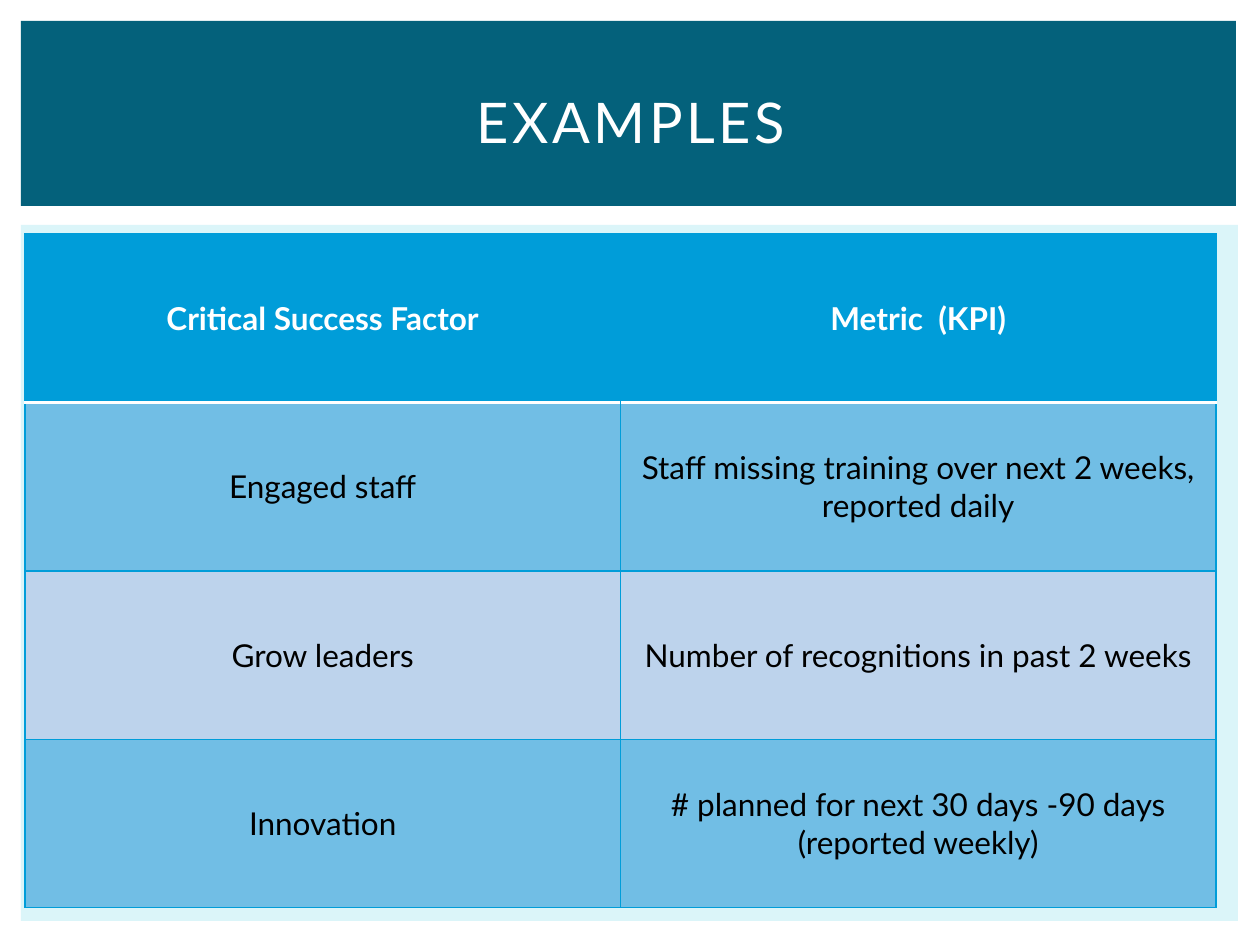
from lxml import etree
from pptx import Presentation
from pptx import util as u
from pptx.dml.color import RGBColor
from pptx.enum import shapes, text
from pptx.oxml.ns import qn

PX = u.Inches(1) / 126
FONT = "Lato"
WHITE = RGBColor(0xFF, 0xFF, 0xFF)
BLACK = RGBColor(0, 0, 0)
TEAL = RGBColor(0x04, 0x61, 0x7B)
PALE = RGBColor(0xDB, 0xF5, 0xF9)
BLUE = RGBColor(0x00, 0x9D, 0xD9)
BAND = RGBColor(0x71, 0xBE, 0xE5)
PLAIN = RGBColor(0xBD, 0xD3, 0xEC)

ROWS = [
    ("Critical Success Factor", "Metric  (KPI)"),
    ("Engaged staff", "Staff missing training over next 2 weeks, reported daily"),
    ("Grow leaders", "Number of recognitions in past 2 weeks"),
    ("Innovation", "# planned for next 30 days -90 days (reported weekly)"),
]


def px(num):
    return u.Emu(round(num * PX))


def panel(slide, box, color):
    rect = slide.shapes.add_shape(shapes.MSO_SHAPE.RECTANGLE, *map(px, box))
    rect.shadow.inherit = False
    rect.fill.solid()
    rect.fill.fore_color.rgb = color
    rect.line.fill.background()


def style(para, size, color, bold=False):
    para.alignment = text.PP_ALIGN.CENTER
    font = para.font
    font.name, font.size, font.bold = FONT, u.Pt(size), bold
    font.color.rgb = color


def title(slide, box, words):
    left, top, width, height = box
    panel(slide, box, TEAL)
    label = slide.shapes.add_textbox(
        px(left + 32), px(top + 28), px(width - 59), px(height - 40))
    frame = label.text_frame
    frame.word_wrap = True
    frame.vertical_anchor = text.MSO_ANCHOR.MIDDLE
    para = frame.paragraphs[0]
    run = para.add_run()
    run.text = words
    style(para, 32, WHITE)
    run.font._element.set("spc", "200")


def edge(cell, side, color, width):
    props = cell._tc.get_or_add_tcPr()
    line = etree.SubElement(props, qn("a:ln" + side), w=str(u.Pt(width)))
    if color is None:
        etree.SubElement(line, qn("a:noFill"))
    else:
        fill = etree.SubElement(line, qn("a:solidFill"))
        etree.SubElement(fill, qn("a:srgbClr"), val=str(color))


def fill_cell(cell, words, row, col):
    head = row == 0
    cell.text = words
    cell.vertical_anchor = text.MSO_ANCHOR.MIDDLE
    style(cell.text_frame.paragraphs[0], 18, WHITE if head else BLACK, head)
    edge(cell, "L", None if head and col == 1 else BLUE, 0.79)
    edge(cell, "R", None if head and col == 0 else BLUE, 0.79)
    edge(cell, "T", *((WHITE, 1.5) if row == 1 else (BLUE, 0.79)))
    edge(cell, "B", *((WHITE, 1.5) if head else (BLUE, 0.79)))
    cell.fill.solid()
    cell.fill.fore_color.rgb = BLUE if head else BAND if row % 2 else PLAIN


def grid(slide, box):
    left, top, width, height = box
    panel(slide, box, PALE)
    table = slide.shapes.add_table(
        len(ROWS), len(ROWS[0]), px(left + 4), px(top + 9),
        px(width - 26), px(height - 22)).table
    for row, line in enumerate(ROWS):
        for col, words in enumerate(line):
            fill_cell(table.cell(row, col), words, row, col)


def main():
    deck = Presentation()
    deck.slide_width, deck.slide_height = u.Inches(10), u.Inches(7.5)
    slide = deck.slides.add_slide(deck.slide_layouts[6])
    grid(slide, (21, 225, 1217, 696))
    title(slide, (21, 21, 1215, 185), "EXAMPLES")
    deck.save("out.pptx")


if __name__ == "__main__":
    main()
